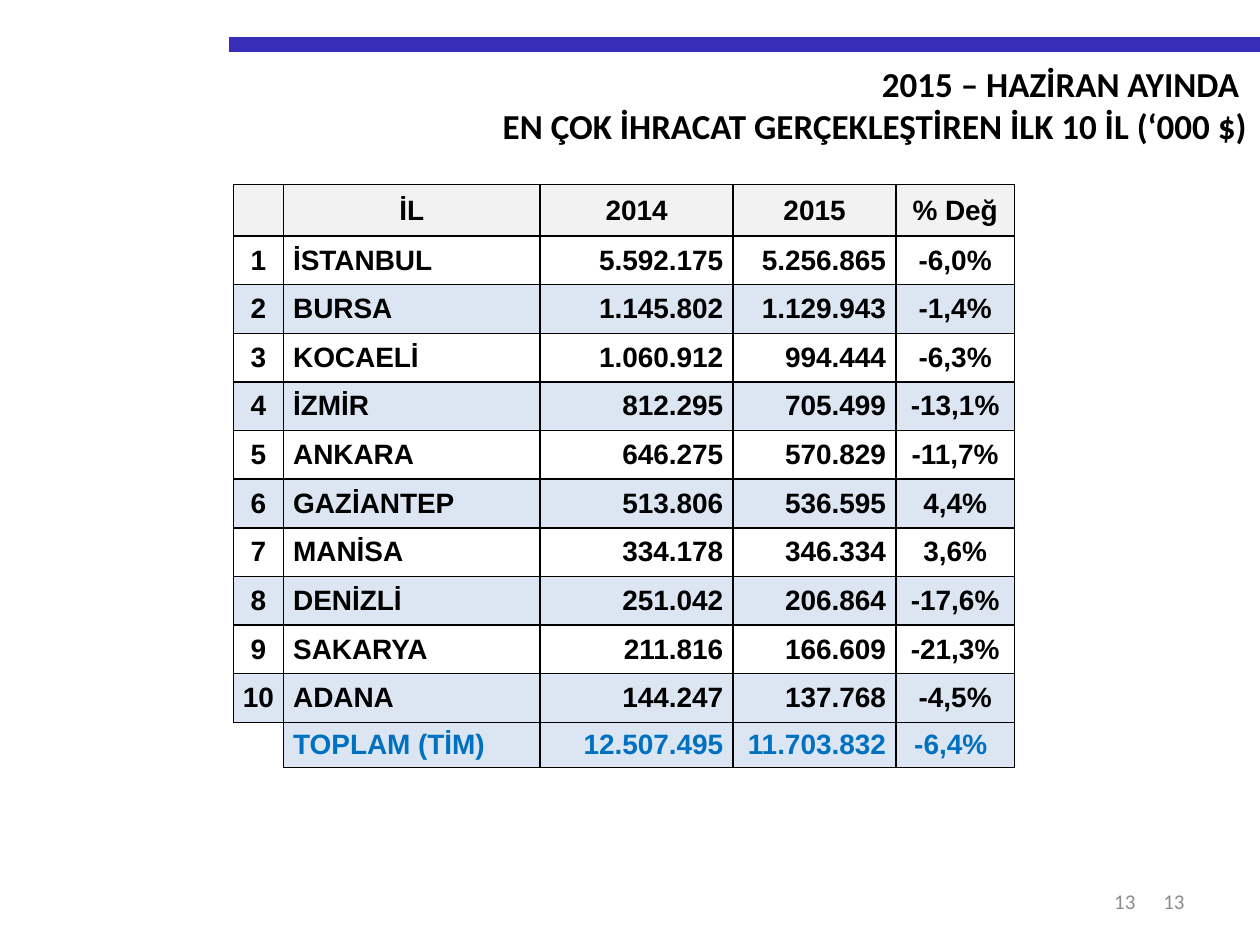
from typing import NamedTuple

from lxml.etree import SubElement
from pptx import Presentation
from pptx.dml.color import RGBColor
from pptx.enum.shapes import MSO_CONNECTOR as Connector
from pptx.enum.text import MSO_ANCHOR as Anchor, PP_ALIGN as Align
from pptx.oxml.ns import qn
from pptx.util import Cm, Pt

BLACK = RGBColor(0x00, 0x00, 0x00)
GREY = RGBColor(0x8C, 0x8C, 0x8C)
INDIGO = RGBColor(0x38, 0x2E, 0xB8)
TOTAL_BLUE = RGBColor(0x00, 0x70, 0xC0)
HEADER_FILL = RGBColor(0xF2, 0xF2, 0xF2)
BAND_FILL = RGBColor(0xDC, 0xE6, 0xF2)


class Column(NamedTuple):
    heading: str
    width: float
    align: Align
    left: float
    right: float


class Province(NamedTuple):
    rank: str
    name: str
    exports_2014: str
    exports_2015: str
    change: str


COLUMNS = [
    Column("", 1, Align.CENTER, 0, 0),
    Column("İL", 5.18, Align.LEFT, 0.2, 0.02),
    Column("2014", 3.89, Align.RIGHT, 0.02, 0.2),
    Column("2015", 3.28, Align.RIGHT, 0.02, 0.2),
    Column("% Değ", 2.39, Align.CENTER, 0.02, 0.02),
]
PROVINCES = [
    Province("1", "İSTANBUL", "5.592.175", "5.256.865", "-6,0%"),
    Province("2", "BURSA", "1.145.802", "1.129.943", "-1,4%"),
    Province("3", "KOCAELİ", "1.060.912", "994.444", "-6,3%"),
    Province("4", "İZMİR", "812.295", "705.499", "-13,1%"),
    Province("5", "ANKARA", "646.275", "570.829", "-11,7%"),
    Province("6", "GAZİANTEP", "513.806", "536.595", "4,4%"),
    Province("7", "MANİSA", "334.178", "346.334", "3,6%"),
    Province("8", "DENİZLİ", "251.042", "206.864", "-17,6%"),
    Province("9", "SAKARYA", "211.816", "166.609", "-21,3%"),
    Province("10", "ADANA", "144.247", "137.768", "-4,5%"),
]
TOTAL = Province("", "TOPLAM (TİM)", "12.507.495", "11.703.832", "-6,4%")
HEADER_HEIGHT, ROW_HEIGHT, TOTAL_HEIGHT = 1.04, 0.98, 0.91


def style(para, font: str, size: float, color: RGBColor, align: Align, bold: bool) -> None:
    para.alignment = align
    para.font.name = font
    para.font.size = Pt(size)
    para.font.bold = bold
    para.font.color.rgb = color


def add_rule(page) -> None:
    rule = page.shapes.add_connector(Connector.STRAIGHT, Cm(4.62), Cm(0.89), Cm(25.4), Cm(0.89))
    rule.line.color.rgb = INDIGO
    rule.line.width = Pt(8.5)
    SubElement(rule._element.spPr, qn("a:effectLst"))


def fill_title(page) -> None:
    title = page.shapes.title
    title.left, title.top, title.width, title.height = Cm(2.69), Cm(1.14), Cm(22.71), Cm(1.96)
    frame = title.text_frame
    frame.word_wrap = True
    frame.vertical_anchor = Anchor.TOP
    frame.text = "2015 – HAZİRAN AYINDA \nEN ÇOK İHRACAT GERÇEKLEŞTİREN İLK 10 İL (‘000 $)"
    for para in frame.paragraphs:
        style(para, "Calibri", 20, BLACK, Align.RIGHT, True)


def add_page_number(page, left: float, width: float) -> None:
    box = page.shapes.add_textbox(Cm(left), Cm(17.65), Cm(width), Cm(1.02))
    frame = box.text_frame
    frame.word_wrap = True
    frame.vertical_anchor = Anchor.MIDDLE
    frame.text = "13"
    style(frame.paragraphs[0], "Calibri", 12, GREY, Align.RIGHT, False)


def set_borders(cell, visible: str) -> None:
    properties = cell._tc.get_or_add_tcPr()
    for side in "LRTB":
        border = SubElement(properties, qn(f"a:ln{side}"), w=str(Pt(1)))
        if side in visible:
            paint = SubElement(border, qn("a:solidFill"))
            SubElement(paint, qn("a:srgbClr"), val=str(BLACK))
        else:
            SubElement(border, qn("a:noFill"))


def fill_cell(cell, text: str, column: Column, fill: RGBColor | None,
              color: RGBColor = BLACK, align: Align | None = None, borders: str = "LRTB") -> None:
    set_borders(cell, borders)
    if fill is None:
        cell.fill.background()
    else:
        cell.fill.solid()
        cell.fill.fore_color.rgb = fill
    cell.margin_left, cell.margin_right = Cm(column.left), Cm(column.right)
    cell.margin_top = cell.margin_bottom = 0
    cell.vertical_anchor = Anchor.MIDDLE
    cell.text = text
    style(cell.text_frame.paragraphs[0], "Arial", 16, color, align or column.align, True)


def add_export_table(page) -> None:
    heights = [HEADER_HEIGHT, *[ROW_HEIGHT] * len(PROVINCES), TOTAL_HEIGHT]
    width = sum(column.width for column in COLUMNS)
    frame = page.shapes.add_table(len(heights), len(COLUMNS), Cm(4.71), Cm(3.72),
                                  Cm(width), Cm(sum(heights)))
    table = frame.table
    table.first_row = table.horz_banding = False
    for row, height in zip(table.rows, heights):
        row.height = Cm(height)
    last = len(heights) - 1
    for index, column in enumerate(COLUMNS):
        table.columns[index].width = Cm(column.width)
        header = column._replace(left=0.25, right=0.25)
        fill_cell(table.cell(0, index), column.heading, header, HEADER_FILL, align=Align.CENTER)
        for number, province in enumerate(PROVINCES, 1):
            band = None if number % 2 else BAND_FILL
            fill_cell(table.cell(number, index), province[index], column, band)
    for index, (column, text) in enumerate(zip(COLUMNS, TOTAL)):
        if text == TOTAL.change:
            column = column._replace(right=0.2)
        fill_cell(table.cell(last, index), text, column, BAND_FILL if text else None,
                  TOTAL_BLUE, borders="LRTB" if text else "RT")


def main() -> None:
    deck = Presentation()
    deck.slide_width, deck.slide_height = Cm(25.4), Cm(19.05)
    page = deck.slides.add_slide(deck.slide_layouts[5])
    add_page_number(page, 18.21, 5.92)
    add_rule(page)
    add_page_number(page, 17.81, 5.33)
    fill_title(page)
    add_export_table(page)
    deck.save("out.pptx")


if __name__ == "__main__":
    main()
